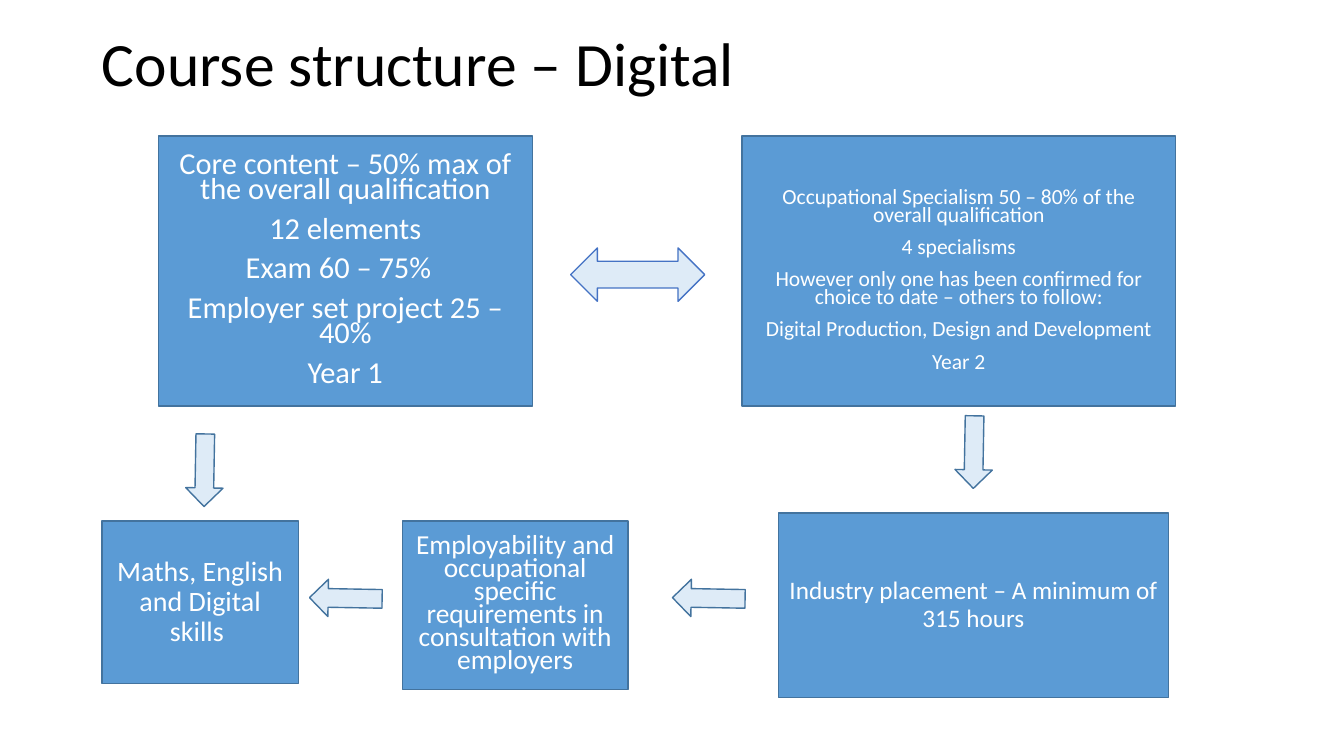
"""Build the digital course structure slide."""
from pptx import Presentation
from pptx.dml.color import RGBColor
from pptx.enum import shapes, text
from pptx.util import Inches, Pt

TITLE = "Course structure – Digital"
BLUE, EDGE, PALE, WHITE = "5B9BD5", "43739E", "DEEBF7", "FFFFFF"

BOXES = [
    ((1.57, 1.35, 3.71, 2.68), 21.7, 0.7, 0.05, [
        "Core content – 50% max of the overall qualification",
        "12 elements",
        "Exam 60 – 75%  ",
        "Employer set project 25 – 40%",
        "Year 1"]),
    ((7.36, 1.35, 4.3, 2.68), 15.4, 0.7, 0.25, [
        "Occupational Specialism 50 – 80% of the overall qualification",
        "4 specialisms",
        "However only one has been confirmed for choice to date – others to follow:",
        "Digital Production, Design and Development",
        "Year 2"]),
    ((7.72, 5.09, 3.87, 1.83), 18, 0.9, 0.05,
     ["Industry placement – A minimum of 315 hours"]),
    ((1.01, 5.17, 1.95, 1.61), 20, 0.9, 0.05,
     ["Maths, English and Digital skills "]),
    ((3.99, 5.17, 2.24, 1.67), 19.6, 0.7, 0.05,
     ["Employability and occupational specific requirements in "
      "consultation with employers"]),
]
ARROWS = [(9.3, 4.3, 91), (6.67, 5.75, 181), (1.67, 4.48, 91), (3.07, 5.75, 181)]


def color(code):
    return RGBColor.from_string(code)


def write(frame, lines, size, ink=WHITE, align=text.PP_ALIGN.CENTER, lead=0.9, top=0.05):
    frame.word_wrap = True
    frame.auto_size = text.MSO_AUTO_SIZE.NONE
    frame.vertical_anchor = text.MSO_ANCHOR.MIDDLE
    frame.margin_top = Inches(top)
    for i, line in enumerate(lines):
        para = frame.add_paragraph() if i else frame.paragraphs[0]
        para.alignment = align
        para.line_spacing = lead
        para.space_before = Pt(10 if i else 0)
        run = para.add_run()
        run.text = line
        run.font.name = "Calibri"
        run.font.size = Pt(size)
        run.font.color.rgb = color(ink)


def draw(slide, kind, area, fill, line=EDGE, turn=0):
    shape = slide.shapes.add_shape(kind, *map(Inches, area))
    shape.shadow.inherit = False
    shape.fill.solid()
    shape.fill.fore_color.rgb = color(fill)
    shape.line.color.rgb = color(line)
    shape.line.width = Pt(1)
    shape.rotation = turn
    return shape


def main():
    deck = Presentation()
    deck.slide_width, deck.slide_height = Inches(13.33), Inches(7.5)
    slide = deck.slides.add_slide(deck.slide_layouts[5])
    kinds = shapes.MSO_SHAPE

    title = slide.shapes.title
    title.left, title.top, title.width, title.height = map(
        Inches, (0.91, -0.06, 11.5, 1.45))
    write(title.text_frame, [TITLE], 44, ink="000000", align=text.PP_ALIGN.LEFT)

    for area, size, lead, top, lines in BOXES:
        box = draw(slide, kinds.RECTANGLE, area, BLUE)
        write(box.text_frame, lines, size, lead=lead, top=top)

    draw(slide, kinds.LEFT_RIGHT_ARROW, (5.66, 2.46, 1.33, 0.53), PALE, line="4472C4")
    for left, top, turn in ARROWS:
        draw(slide, kinds.RIGHT_ARROW, (left, top, 0.72, 0.37), PALE, turn=turn)

    deck.save("out.pptx")


if __name__ == "__main__":
    main()
